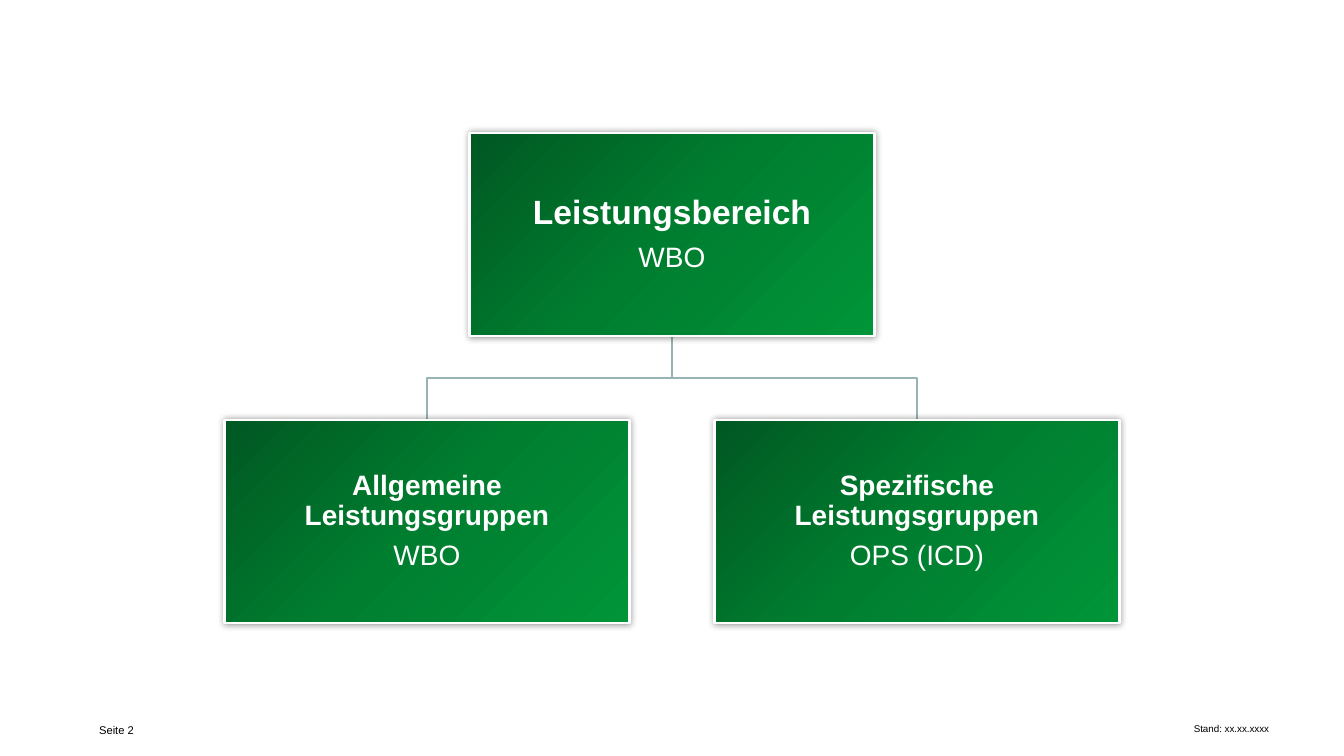
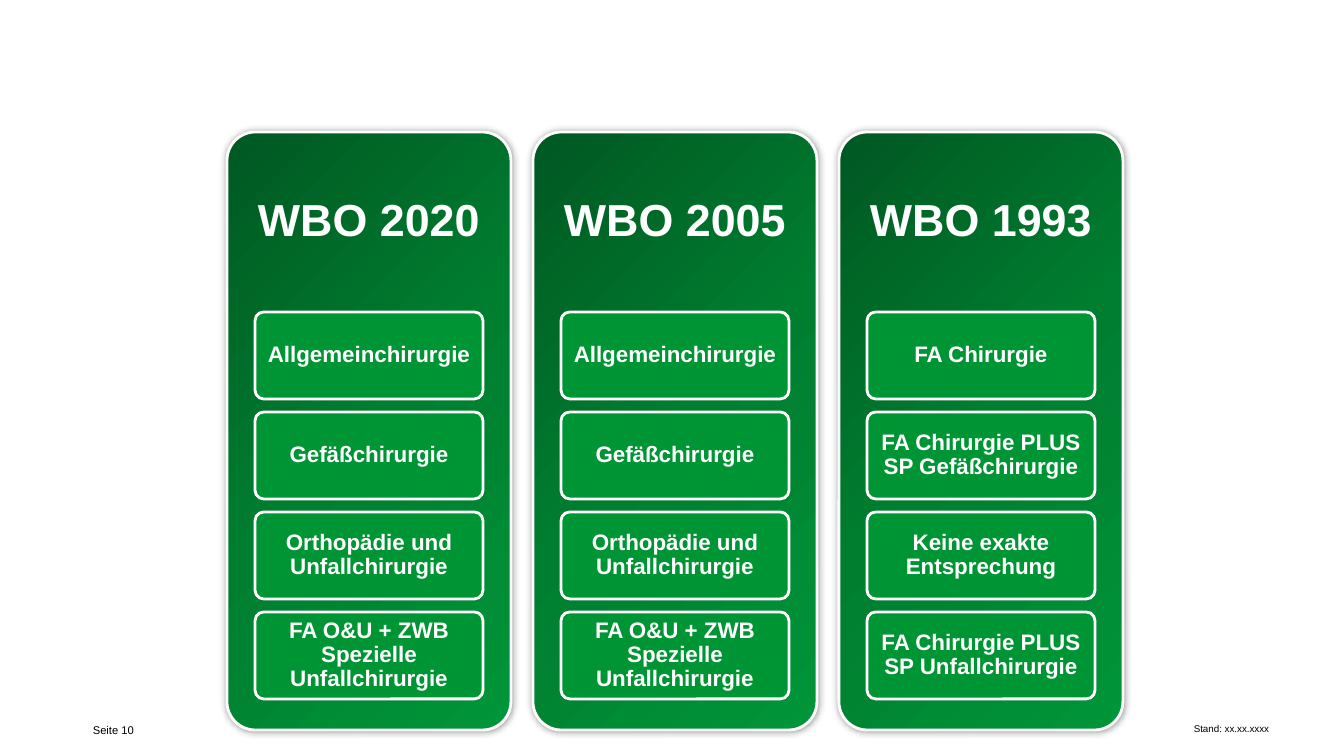
from pptx import Presentation
from pptx.dml.color import RGBColor as RGB
from pptx.enum.shapes import MSO_SHAPE as Kind
from pptx.enum.text import MSO_ANCHOR as Anchor, PP_ALIGN as Align
from pptx.oxml import parse_xml
from pptx.oxml.ns import nsdecls
from pptx.util import Pt

PX = 914400 / 100.8
FONT = "Arial"
HUES = {
    "dark": "005822", "mid": "007E30", "light": "009539",
    "cell": "009534", "line": "96B3B6", "white": "FFFFFF", "black": "000000",
}
GRAD = (
    f'<a:gradFill {nsdecls("a")} rotWithShape="1"><a:gsLst>'
    + "".join(f'<a:gs pos="{pos}"><a:srgbClr val="{HUES[hue]}"/></a:gs>'
              for pos, hue in ((0, "dark"), (50000, "mid"), (100000, "light")))
    + '</a:gsLst><a:lin ang="2700000" scaled="0"/></a:gradFill>'
)
GLOW = (
    f'<a:effectLst {nsdecls("a")}><a:outerShdw blurRad="63500" dist="0" dir="0" '
    f'algn="ctr" rotWithShape="0"><a:srgbClr val="{HUES["black"]}">'
    '<a:alpha val="40000"/></a:srgbClr></a:outerShdw></a:effectLst>'
)


def write(frame, text, size, hue="white", bold=False, align=Align.CENTER,
          lead=0.9, after=0.35):
    """Add one paragraph; after is a share of the font size."""
    par = frame.paragraphs[0] if not frame.text else frame.add_paragraph()
    par.alignment = align
    par.line_spacing = lead
    par.space_after = Pt(size * after)
    run = par.add_run()
    run.text = text
    font = run.font
    font.name, font.size, font.bold = FONT, Pt(size), bold
    font.color.rgb = RGB.from_string(HUES[hue])


def box(slide, kind, x, y, w, h, pad, foot=0, hue=None):
    """Draw a white-edged box, graded and glowing unless a hue is given."""
    shape = slide.shapes.add_shape(kind, *(round(n * PX) for n in (x, y, w, h)))
    if kind == Kind.ROUNDED_RECTANGLE:
        shape.adjustments[0] = 0.1
    shape.line.color.rgb = RGB.from_string(HUES["white"])
    shape.line.width = Pt(2)
    if hue:
        shape.shadow.inherit = False
        shape.fill.solid()
        shape.fill.fore_color.rgb = RGB.from_string(HUES[hue])
    else:
        props = shape._element.spPr
        props.insert(2, parse_xml(GRAD))
        props.append(parse_xml(GLOW))
    frame = shape.text_frame
    frame.word_wrap = True
    frame.vertical_anchor = Anchor.MIDDLE
    frame.margin_left = frame.margin_right = frame.margin_top = round(pad * PX)
    frame.margin_bottom = round((pad + foot) * PX)
    return frame


deck = Presentation()
deck.slide_width, deck.slide_height = round(1344 * PX), round(756 * PX)

# Slides with their shared footer
for page in (2, 10):
    slide = deck.slides.add_slide(deck.slide_layouts[6])
    for text, size, x, w in (("Stand: xx.xx.xxxx", 7, 948, 331),
                             (f"Seite {page}", 8, 16, 128)):
        note = slide.shapes.add_textbox(*(round(n * PX) for n in (x, 718, w, 33)))
        note.text_frame.word_wrap = True
        write(note.text_frame, text, size, hue="black", align=Align.RIGHT,
              lead=1, after=0)
tree, table = deck.slides

# Tree: branches behind, boxes in front
W, H, TOP, LOW, MID, STEP = 405, 203, 133, 420, 672, 245
fork = (TOP + H + LOW) / 2
for end in (MID + STEP, MID - STEP):
    path = tree.shapes.build_freeform(MID, TOP + H, scale=PX)
    path.add_line_segments([(MID, fork), (end, fork), (end, LOW)], close=False)
    branch = path.convert_to_shape()
    branch.shadow.inherit = False
    branch.fill.background()
    branch.line.color.rgb = RGB.from_string(HUES["line"])
    branch.line.width = Pt(2)

for mid, y, head, size, sub in (
    (MID, TOP, "Leistungsbereich", 24, "WBO"),
    (MID - STEP, LOW, "Allgemeine Leistungsgruppen", 20, "WBO"),
    (MID + STEP, LOW, "Spezifische Leistungsgruppen", 20, "OPS (ICD)"),
):
    frame = box(tree, Kind.RECTANGLE, mid - W / 2, y, W, H, pad=2)
    write(frame, head, size, bold=True)
    write(frame, sub, 20)

# Columns: one panel per year with four cells
same = ["Allgemeinchirurgie", "Gefäßchirurgie", "Orthopädie und Unfallchirurgie",
        "FA O&U + ZWB Spezielle Unfallchirurgie"]
old = ["FA Chirurgie", "FA Chirurgie PLUS SP Gefäßchirurgie",
       "Keine exakte Entsprechung", "FA Chirurgie PLUS SP Unfallchirurgie"]
for col, (year, cells) in enumerate(((2020, same), (2005, same), (1993, old))):
    x = 227 + 306 * col
    frame = box(table, Kind.ROUNDED_RECTANGLE, x, 132, 284, 598, pad=13, foot=418)
    write(frame, f"WBO {year}", 32, bold=True)
    for row, text in enumerate(cells):
        frame = box(table, Kind.ROUNDED_RECTANGLE, x + 28, 312 + 100 * row, 228, 87,
                    pad=3, hue="cell")
        write(frame, text, 16, bold=True)

deck.save("out.pptx")
